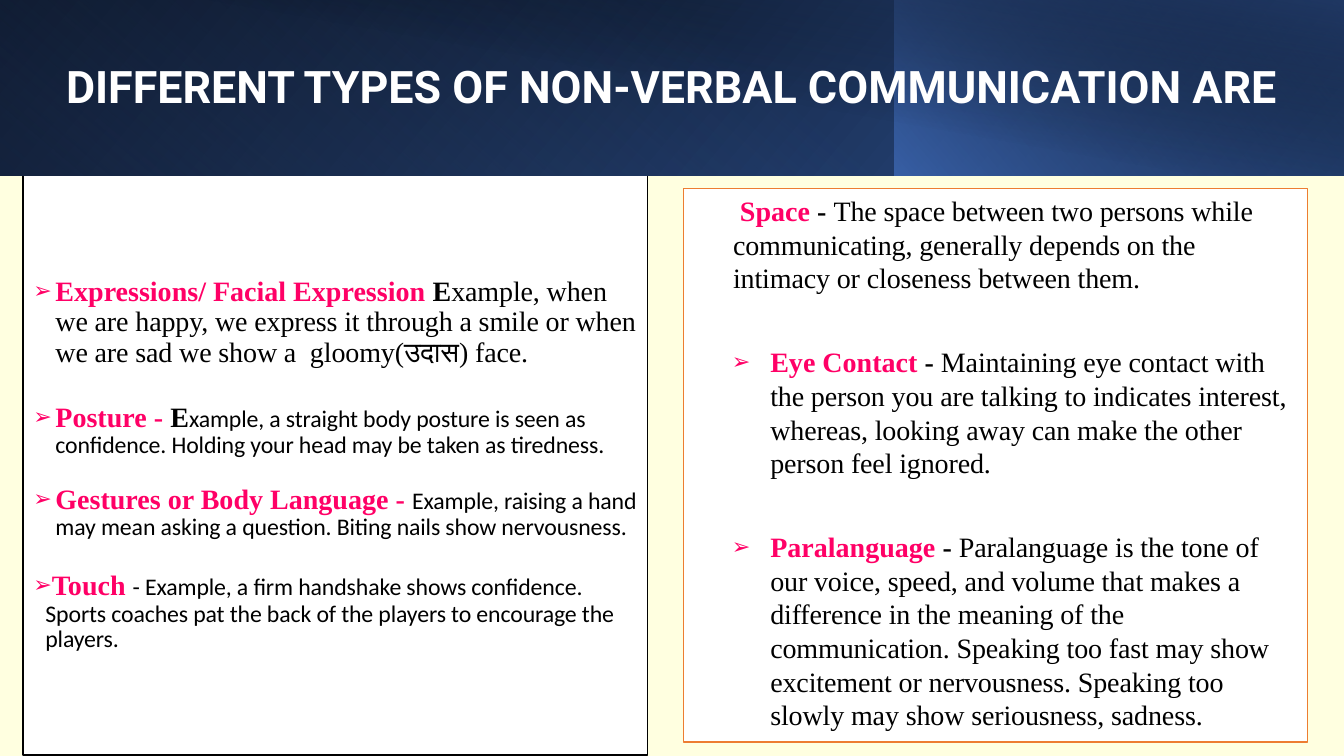
from lxml.etree import SubElement
from pptx import Presentation
from pptx.dml.color import RGBColor
from pptx.enum.shapes import MSO_SHAPE
from pptx.enum.text import MSO_ANCHOR, MSO_AUTO_SIZE, PP_ALIGN
from pptx.oxml.ns import qn
from pptx.util import Inches, Pt

WHITE = RGBColor(0xFF, 0xFF, 0xFF)
BLACK = RGBColor(0x00, 0x00, 0x00)
PINK = RGBColor(0xFF, 0x00, 0x66)
CREAM = RGBColor(0xFF, 0xFF, 0xE0)
ORANGE = RGBColor(0xED, 0x7D, 0x31)
NAVY = RGBColor(0x20, 0x38, 0x64)
ROYAL = RGBColor(0x2F, 0x55, 0x97)
BLUE = RGBColor(0x44, 0x72, 0xC4)
SERIF = "Times New Roman"
SANS = "Calibri"

HEAD = (SERIF, 20, PINK, True, 0)
STRONG = (SERIF, 20, BLACK, True, 0)
PLAIN = (SERIF, 20, BLACK, False, -10)
SMALL = (SANS, 17, BLACK, False, -10)

LEFT_ITEMS = [
    (0.22, -0.38, 0, 6, True, [
        ("Expressions/ Facial Expression ", HEAD), ("E", STRONG),
        ("xample, when we are happy, we express it through a smile or "
         "when we are sad we show a  gloomy(उदास) face.", PLAIN)]),
    (0.22, -0.38, 19, 0, True, [
        ("Posture - ", HEAD), ("E", STRONG),
        ("xample, a straight body posture is seen as confidence. "
         "Holding your head may be taken as tiredness.", SMALL)]),
    (0.22, -0.38, 18.5, 0, True, [
        ("Gestures or Body Language - ", HEAD),
        ("Example, raising a hand may mean asking a question. "
         "Biting nails show nervousness.", SMALL)]),
    (0.12, -0.38, 21.6, 0, True, [
        ("Touch ", HEAD),
        ("- Example, a firm handshake shows confidence. Sports coaches pat "
         "the back of the players to encourage the players.", SMALL)]),
]
RIGHT_ITEMS = [
    (0.39, 0, 0, 6, False, [
        (" Space ", HEAD), ("- ", STRONG),
        ("The space between two persons while communicating, generally "
         "depends on the intimacy or closeness between them.", PLAIN)]),
    (0.76, -0.38, 30, 6, True, [
        ("Eye Contact ", HEAD), ("- ", STRONG),
        ("Maintaining eye contact with the person you are talking to "
         "indicates interest, whereas, looking away can make the other "
         "person feel ignored.", PLAIN)]),
    (0.76, -0.38, 30, 6, True, [
        ("Paralanguage ", HEAD), ("- ", STRONG),
        ("Paralanguage is the tone of our voice, speed, and volume that "
         "makes a  difference in the meaning of the communication. Speaking "
         "too fast may show excitement or nervousness. Speaking too slowly "
         "may show seriousness, sadness.", PLAIN)]),
]


def place(sp, x, y, w, h):
    """Move and size a shape, in inches."""
    sp.left, sp.top, sp.width, sp.height = map(Inches, (x, y, w, h))


def add_run(p, text, style):
    """Add one run in a (font, size, colour, bold, spacing) style."""
    name, size, color, bold, spacing = style
    r = p.add_run()
    r.text = text
    r.font.name, r.font.size, r.font.bold = name, Pt(size), bold
    r.font.color.rgb = color
    if spacing:
        r.font._element.set("spc", str(spacing))


def set_indent(p, margin, indent, bullet):
    """Set the paragraph's margin, hanging indent and arrow bullet."""
    pPr = p._p.get_or_add_pPr()
    pPr.set("marL", str(Inches(margin)))
    pPr.set("indent", str(Inches(indent)))
    if bullet:
        SubElement(pPr, qn("a:buSzPct")).set("val", "79000")
        SubElement(pPr, qn("a:buChar")).set("char", "➢")
    else:
        SubElement(pPr, qn("a:buNone"))


def add_gradient(s, box, stops, angle, flip=True, rotation=0):
    """Add a rectangle with a gradient of (position, colour, opacity) stops."""
    sp = s.shapes.add_shape(MSO_SHAPE.RECTANGLE, *map(Inches, box))
    sp.shadow.inherit = False
    sp.line.fill.background()
    sp.rotation = rotation
    if flip:
        sp.element.spPr.find(qn("a:xfrm")).set("flipH", "1")
    sp.fill.gradient()
    grad = sp.element.spPr.find(qn("a:gradFill"))
    for child in list(grad):
        grad.remove(child)
    gs_lst = SubElement(grad, qn("a:gsLst"))
    for pos, color, opacity in stops:
        gs = SubElement(gs_lst, qn("a:gs"), pos=str(pos * 1000))
        clr = SubElement(gs, qn("a:srgbClr"), val=str(color))
        SubElement(clr, qn("a:alpha"), val=str(opacity * 1000))
    SubElement(grad, qn("a:lin"), ang=str(angle * 60000), scaled="0")


def add_banner(s, x, y, w, h):
    """Layer the gradients of the banner and set the title on top."""
    split = 8.87
    add_gradient(s, (x, y, w, h), [(0, BLACK, 100), (100, ROYAL, 100)], 140)
    add_gradient(s, (x, y, split, h), [(20, BLUE, 0), (100, NAVY, 55)], 230,
                 rotation=180)
    add_gradient(s, (x + split, y, w - split, h),
                 [(0, BLUE, 66), (100, BLACK, 30)], 220)
    add_gradient(s, (x + 0.5, y, w - 0.5, h), [(50, BLACK, 0), (99, NAVY, 52)],
                 280, flip=False)
    title = s.shapes.title
    title.element.getparent().append(title.element)
    place(title, x, y + 0.32, w, 1.13)
    tf = title.text_frame
    tf.auto_size = MSO_AUTO_SIZE.NONE
    tf.word_wrap = True
    tf.vertical_anchor = MSO_ANCHOR.MIDDLE
    p = tf.paragraphs[0]
    p.alignment = PP_ALIGN.CENTER
    p.line_spacing = 0.9
    p.space_before, p.space_after = Pt(0), Pt(6)
    add_run(p, "DIFFERENT TYPES OF NON-VERBAL COMMUNICATION ARE",
            ("Roboto", 32, WHITE, True, 0))


def fill_panel(sp, box, items, line, anchor, spacing):
    """Turn a body placeholder into an outlined panel of items."""
    place(sp, *box)
    sp.fill.solid()
    sp.fill.fore_color.rgb = WHITE
    sp.line.color.rgb = line
    sp.line.width = Pt(1)
    tf = sp.text_frame
    tf.auto_size = MSO_AUTO_SIZE.NONE
    tf.word_wrap = True
    tf.vertical_anchor = anchor
    for i, (margin, indent, before, after, bullet, runs) in enumerate(items):
        p = tf.add_paragraph() if i else tf.paragraphs[0]
        p.alignment = PP_ALIGN.LEFT
        p.line_spacing = spacing
        p.space_before, p.space_after = Pt(before), Pt(after)
        set_indent(p, margin, indent, bullet)
        for text, style in runs:
            add_run(p, text, style)


def main():
    """Build and save the slide."""
    prs = Presentation()
    prs.slide_width, prs.slide_height = Inches(13.33), Inches(7.5)
    s = prs.slides.add_slide(prs.slide_layouts[3])
    s.background.fill.solid()
    s.background.fill.fore_color.rgb = CREAM
    add_banner(s, 0, 0, 13.33, 1.74)
    fill_panel(s.placeholders[1], (0.23, 1.74, 6.19, 5.75), LEFT_ITEMS,
               BLACK, MSO_ANCHOR.MIDDLE, 0.9)
    fill_panel(s.placeholders[2], (6.78, 1.87, 6.19, 5.49), RIGHT_ITEMS,
               ORANGE, MSO_ANCHOR.TOP, 1.0)
    prs.save("out.pptx")


if __name__ == "__main__":
    main()
